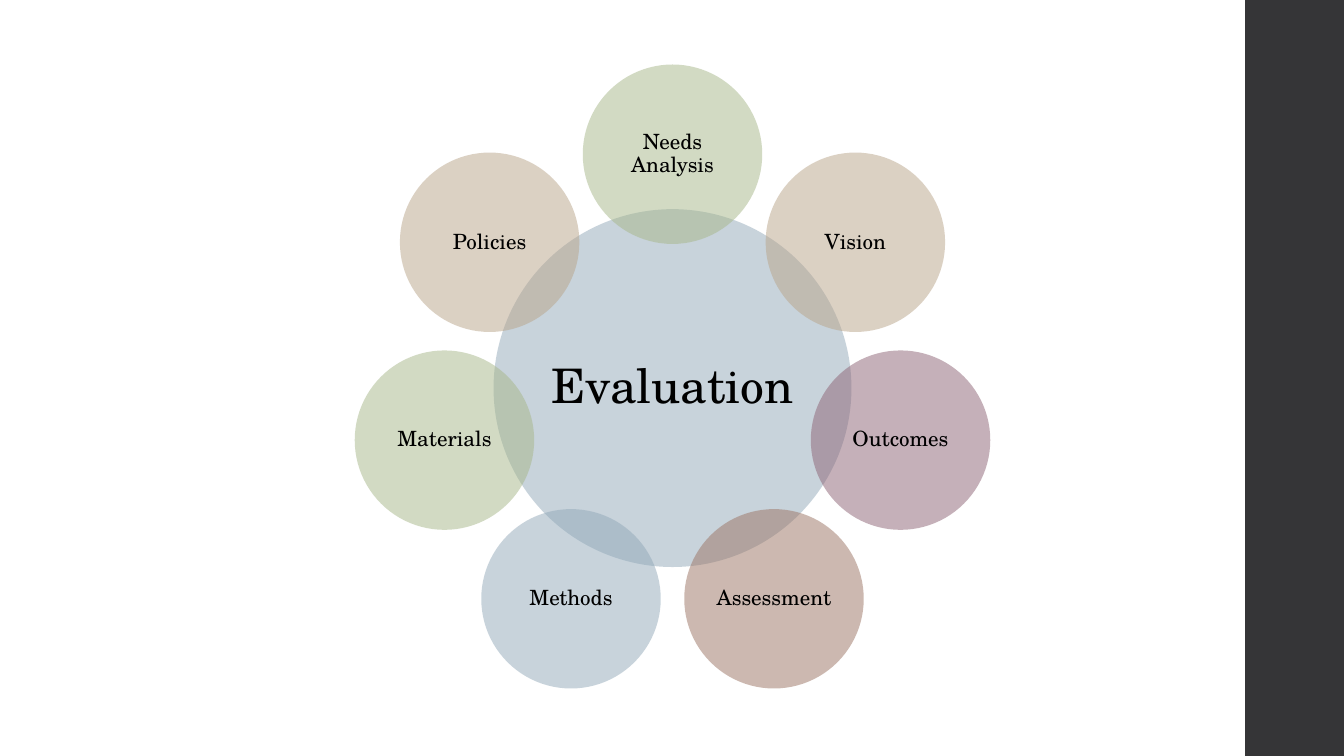
import math

import pptx
import pptx.dml.color
import pptx.enum.shapes
import pptx.enum.text
import pptx.oxml
import pptx.oxml.ns
import pptx.util
from pptx.util import Inches

COLORS = {
    "bar": "353537",
    "blue": "92A9B9",
    "green": "A7B789",
    "tan": "B9A489",
    "plum": "8D6374",
    "rust": "9B7362",
    "text": "000000",
}

TOPICS = [
    ("Needs Analysis", "green"),
    ("Vision", "tan"),
    ("Outcomes", "plum"),
    ("Assessment", "rust"),
    ("Methods", "blue"),
    ("Materials", "green"),
    ("Policies", "tan"),
]


class RadialSlide:
    font = "TeX Gyre Schola"

    def __init__(self, prs):
        self.s = prs.slides.add_slide(prs.slide_layouts[6])

    def paint(self, sp, color):
        sp.shadow.inherit = False
        sp.fill.solid()
        sp.fill.fore_color.rgb = pptx.dml.color.RGBColor.from_string(COLORS[color])
        sp.line.fill.background()

    def bar(self, x, y, w, h):
        sp = self.s.shapes.add_shape(
            pptx.enum.shapes.MSO_SHAPE.RECTANGLE, Inches(x), Inches(y), Inches(w), Inches(h)
        )
        self.paint(sp, "bar")

    def group(self):
        return self.s.shapes.add_group_shape()

    def circle(self, group, cx, cy, size, text, color, pt, inset):
        sp = group.shapes.add_shape(
            pptx.enum.shapes.MSO_SHAPE.OVAL,
            Inches(cx - size / 2), Inches(cy - size / 2), Inches(size), Inches(size),
        )
        self.paint(sp, color)
        fill = sp.fill._xPr.find(pptx.oxml.ns.qn("a:solidFill"))
        alpha = pptx.oxml.parse_xml(f'<a:alpha {pptx.oxml.ns.nsdecls("a")} val="50000"/>')
        fill[0].append(alpha)

        tf = sp.text_frame
        tf.text = text
        tf.word_wrap = True
        tf.vertical_anchor = pptx.enum.text.MSO_ANCHOR.MIDDLE
        tf.margin_left = tf.margin_right = Inches(inset)
        tf.margin_top = tf.margin_bottom = Inches(inset)
        p = tf.paragraphs[0]
        p.alignment = pptx.enum.text.PP_ALIGN.CENTER
        p.line_spacing = 0.9
        r = p.runs[0]
        r.font.name = self.font
        r.font.size = pptx.util.Pt(pt)
        r.font.color.rgb = pptx.dml.color.RGBColor.from_string(COLORS["text"])


def main():
    prs = pptx.Presentation()
    prs.slide_width = Inches(13.33)
    prs.slide_height = Inches(7.5)

    slide = RadialSlide(prs)
    slide.bar(12.35, 0, 0.98, 7.5)

    cx, cy, orbit = 6.67, 3.85, 2.32
    diagram = slide.group()
    slide.circle(diagram, cx, cy, 3.55, "Evaluation", "blue", 34, 0.05)
    for i, (topic, color) in enumerate(TOPICS):
        angle = 2 * math.pi * i / len(TOPICS)
        x = cx + orbit * math.sin(angle)
        y = cy - orbit * math.cos(angle)
        slide.circle(diagram, x, y, 1.78, topic, color, 15, 0.02)

    prs.save("out.pptx")


if __name__ == "__main__":
    main()
